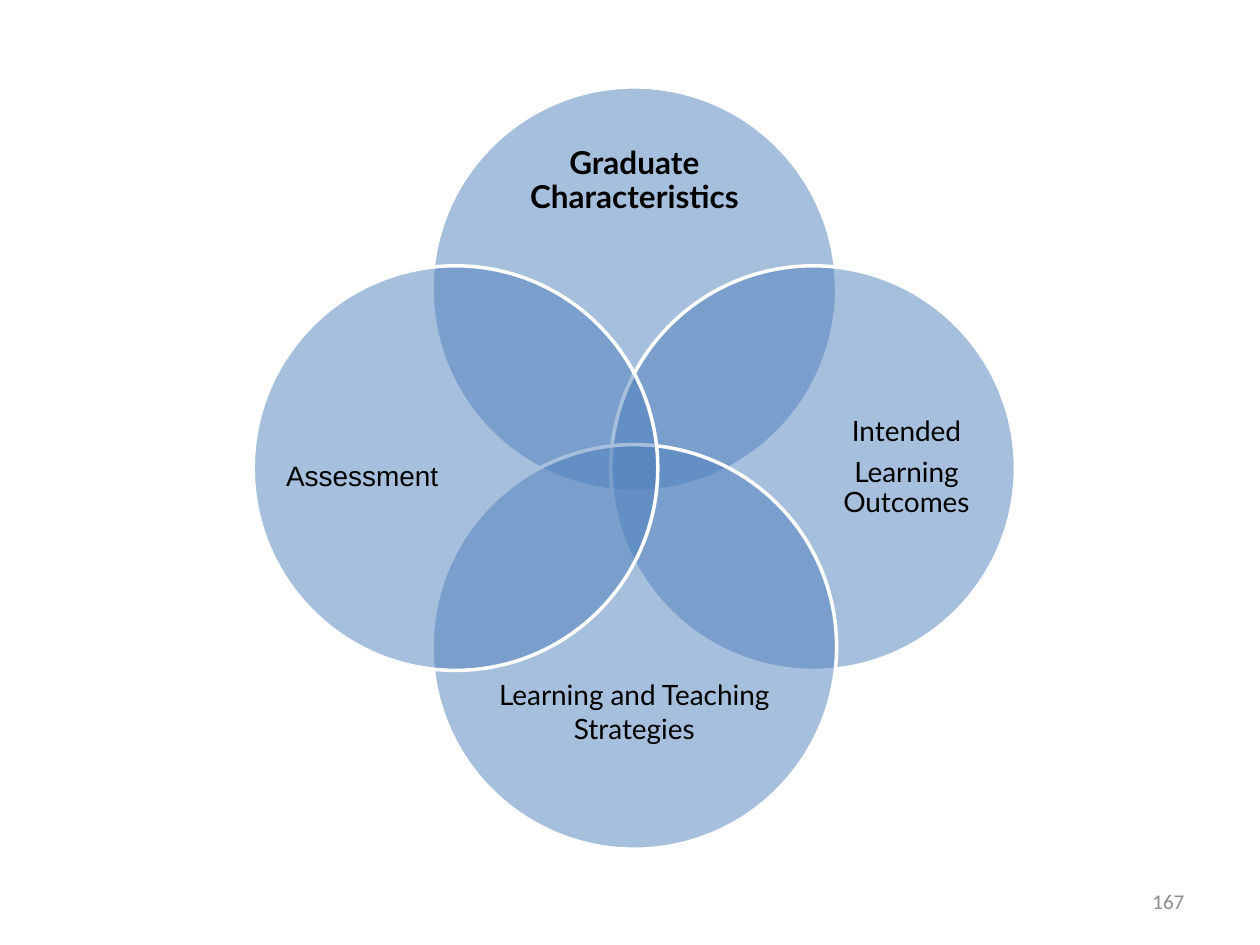
import lxml.etree
import pptx
import pptx.dml.color
import pptx.enum.shapes
import pptx.enum.text
import pptx.oxml.ns
import pptx.util

Pt = pptx.util.Pt
RGB = pptx.dml.color.RGBColor.from_string
ALIGN = pptx.enum.text.PP_ALIGN
COLORS = {"circle": "4F81BD", "outline": "FFFFFF", "text": "000000", "number": "8C8C8C"}


def add_text(shapes, text, box, size=16, font="Lato", color="text", bold=False,
             align=ALIGN.CENTER, spacing=1.0, after=0, top=0, bottom=0):
    sp = shapes.add_textbox(*[Pt(v) for v in box])
    tf = sp.text_frame
    tf.word_wrap = True
    tf.vertical_anchor = pptx.enum.text.MSO_ANCHOR.MIDDLE
    tf.margin_left = tf.margin_right = 0
    tf.margin_top, tf.margin_bottom = Pt(top), Pt(bottom)
    tf.text = text
    for p in tf.paragraphs:
        p.alignment = align
        p.line_spacing = spacing
        p.space_after = Pt(after)
        f = p.runs[0].font
        f.size, f.name, f.bold = Pt(size), font, bold
        f.color.rgb = RGB(COLORS[color])


prs = pptx.Presentation()
prs.slide_width, prs.slide_height = Pt(720), Pt(540)
s = prs.slides.add_slide(prs.slide_layouts[6])

add_text(s.shapes, "167", (516.24, 500.4, 160.56, 28.8), size=12, font="Calibri",
         color="number", align=ALIGN.RIGHT)

center_x, center_y, diameter, offset = 362.5, 267.5, 231.2, 102.2
wide, tall = (177.84, 73.44), (88.56, 177.84)
circles = [
    (0, -1, "Graduate Characteristics", (273.6, 80.64, *wide),
     dict(size=18, bold=True, spacing=0.9, bottom=27)),
    (1, 0, "Intended\nLearning Outcomes", (473.76, 178.56, *tall),
     dict(spacing=0.9, after=5.6)),
    (0, 1, "Learning and Teaching Strategies", (273.6, 380.16, *wide), dict(bottom=21)),
    (-1, 0, "Assessment", (162.72, 178.56, *tall), dict(font="Arial", top=8)),
]

venn = s.shapes.add_group_shape().shapes
for dx, dy, label, box, style in circles:
    left = center_x + dx * offset - diameter / 2
    top = center_y + dy * offset - diameter / 2
    sp = venn.add_shape(pptx.enum.shapes.MSO_SHAPE.OVAL,
                        Pt(left), Pt(top), Pt(diameter), Pt(diameter))
    sp.shadow.inherit = False
    sp.fill.solid()
    sp.fill.fore_color.rgb = RGB(COLORS["circle"])
    sp.line.color.rgb = RGB(COLORS["outline"])
    sp.line.width = Pt(2)
    qn = pptx.oxml.ns.qn
    fill = sp.element.spPr.find(qn("a:solidFill"))
    lxml.etree.SubElement(fill[0], qn("a:alpha")).set("val", "50000")
    add_text(venn, label, box, **style)

prs.save("out.pptx")
